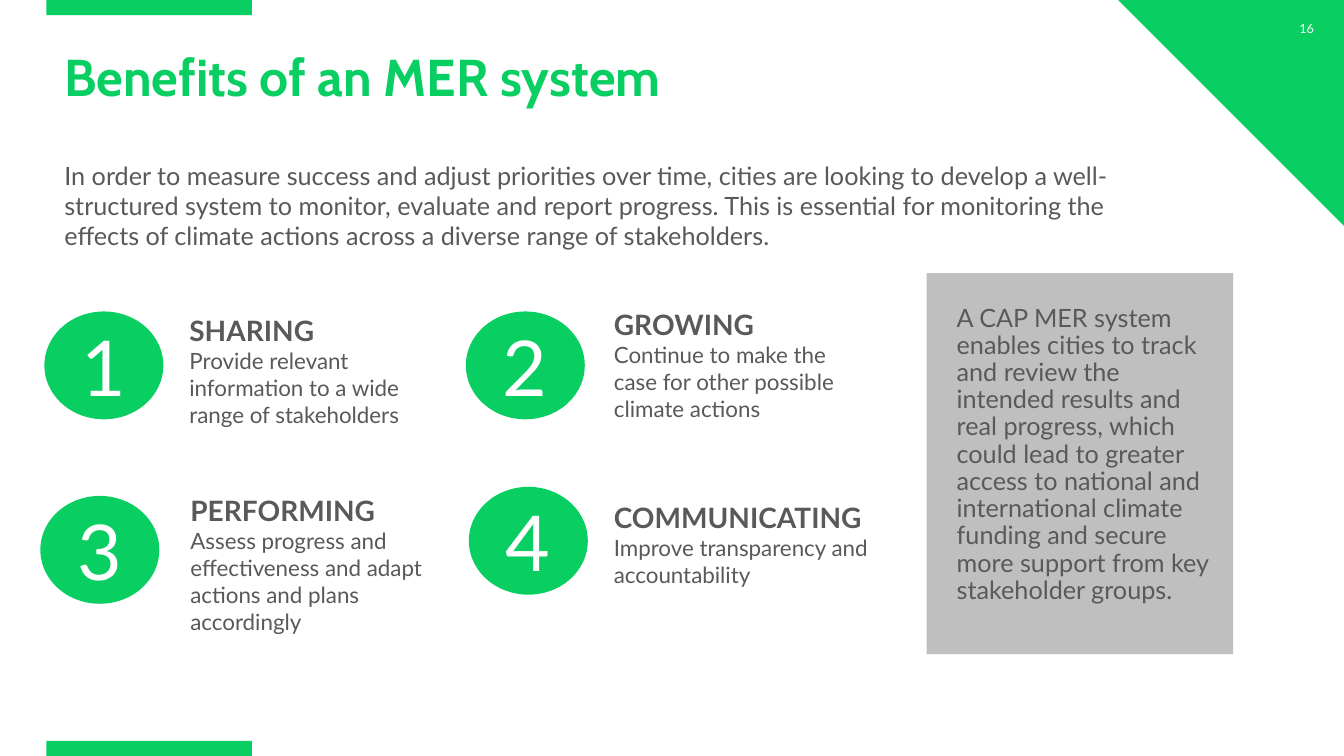
from pptx import Presentation
from pptx.dml.color import RGBColor
from pptx.enum.shapes import MSO_SHAPE as Shape
from pptx.enum.text import MSO_ANCHOR as Anchor, PP_ALIGN as Align
from pptx.util import Inches, Pt

COLORS = {"green": "09CF62", "gray": "595959", "panel": "BFBFBF", "white": "FFFFFF"}
BODY_FONT = "Lato"
TITLE_FONT = "Cabin"

# Each benefit: number, oval position, text box, heading, description
BENEFITS = [
    ("1", (0.44, 3.09), (1.78, 3.06, 2.78, 1.28), "SHARING",
     "Provide relevant information to a wide range of stakeholders"),
    ("2", (4.62, 3.09), (5.99, 3, 2.62, 1.25), "GROWING",
     "Continue to make the case for other possible climate actions"),
    ("3", (0.4, 4.92), (1.79, 4.85, 2.57, 1.55), "PERFORMING",
     "Assess progress and effectiveness and adapt actions and plans accordingly"),
    ("4", (4.65, 4.83), (5.99, 4.92, 3.04, 0.98), "COMMUNICATING",
     "Improve transparency and accountability"),
]
OVAL_SIZE = (1.18, 1.07)


def style(para, size, color, bold=False, font=BODY_FONT, align=Align.LEFT, spacing=1.0):
    para.alignment = align
    para.line_spacing = spacing
    for span in para.runs:
        span.font.name = font
        span.font.size = Pt(size)
        span.font.bold = bold
        span.font.color.rgb = RGBColor.from_string(COLORS[color])


def add_block(page, kind, box, color):
    block = page.shapes.add_shape(kind, *map(Inches, box))
    block.shadow.inherit = False
    block.fill.solid()
    block.fill.fore_color.rgb = RGBColor.from_string(COLORS[color])
    block.line.fill.background()
    return block


def add_text(page, box, text, size, color, **options):
    frame = page.shapes.add_textbox(*map(Inches, box)).text_frame
    frame.word_wrap = True
    frame.text = text
    style(frame.paragraphs[0], size, color, **options)
    return frame


def add_decoration(page, width, height):
    # Bars at the top and bottom edges, triangle in the corner
    bar_height, corner = 0.15, 2.24
    for top in (0, height - bar_height):
        add_block(page, Shape.RECTANGLE, (0.46, top, 2.04, bar_height), "green")
    triangle = add_block(page, Shape.RIGHT_TRIANGLE,
                         (width - corner, 0, corner, corner), "green")
    triangle.rotation = 180
    add_text(page, (width - 0.88, 0.18, 0.68, 0.26), "16", 9, "white",
             align=Align.RIGHT, spacing=0.9)


def add_header(page, left, top):
    add_text(page, (left, top, 6.43, 0.66), "Benefits of an MER system", 37, "green",
             bold=True, font=TITLE_FONT, spacing=0.9)
    add_text(page, (left, top + 1.08, 10.92, 0.98),
             "In order to measure success and adjust priorities over time, cities are "
             "looking to develop a well-structured system to monitor, evaluate and report "
             "progress. This is essential for monitoring the effects of climate actions "
             "across a diverse range of stakeholders.", 18, "gray")


def add_benefit(page, number, corner, text_box, heading, description):
    # Numbered oval
    oval = add_block(page, Shape.OVAL, (*corner, *OVAL_SIZE), "green")
    frame = oval.text_frame
    frame.margin_left = frame.margin_right = frame.margin_top = frame.margin_bottom = 0
    frame.vertical_anchor = Anchor.MIDDLE
    frame.text = number
    style(frame.paragraphs[0], 55, "white", align=Align.CENTER)

    # Heading and description
    frame = add_text(page, text_box, heading, 20, "gray", bold=True)
    para = frame.add_paragraph()
    para.text = description
    style(para, 16, "gray")


def add_panel(page, left, top, width, height):
    add_block(page, Shape.RECTANGLE, (left, top, width, height), "panel")
    add_text(page, (left + 0.2, top + 0.27, width - 0.34, height - 0.35),
             "A CAP MER system enables cities to track and review the intended results "
             "and real progress, which could lead to greater access to national and "
             "international climate funding and secure more support from key "
             "stakeholder groups.", 18, "gray", spacing=0.9)


def main():
    width, height = 13.33, 7.5
    deck = Presentation()
    deck.slide_width, deck.slide_height = Inches(width), Inches(height)
    page = deck.slides.add_slide(deck.slide_layouts[6])
    add_decoration(page, width, height)
    add_header(page, 0.54, 0.46)
    for benefit in BENEFITS:
        add_benefit(page, *benefit)
    add_panel(page, 9.19, 2.71, 3.04, 3.78)
    deck.save("out.pptx")


if __name__ == "__main__":
    main()
